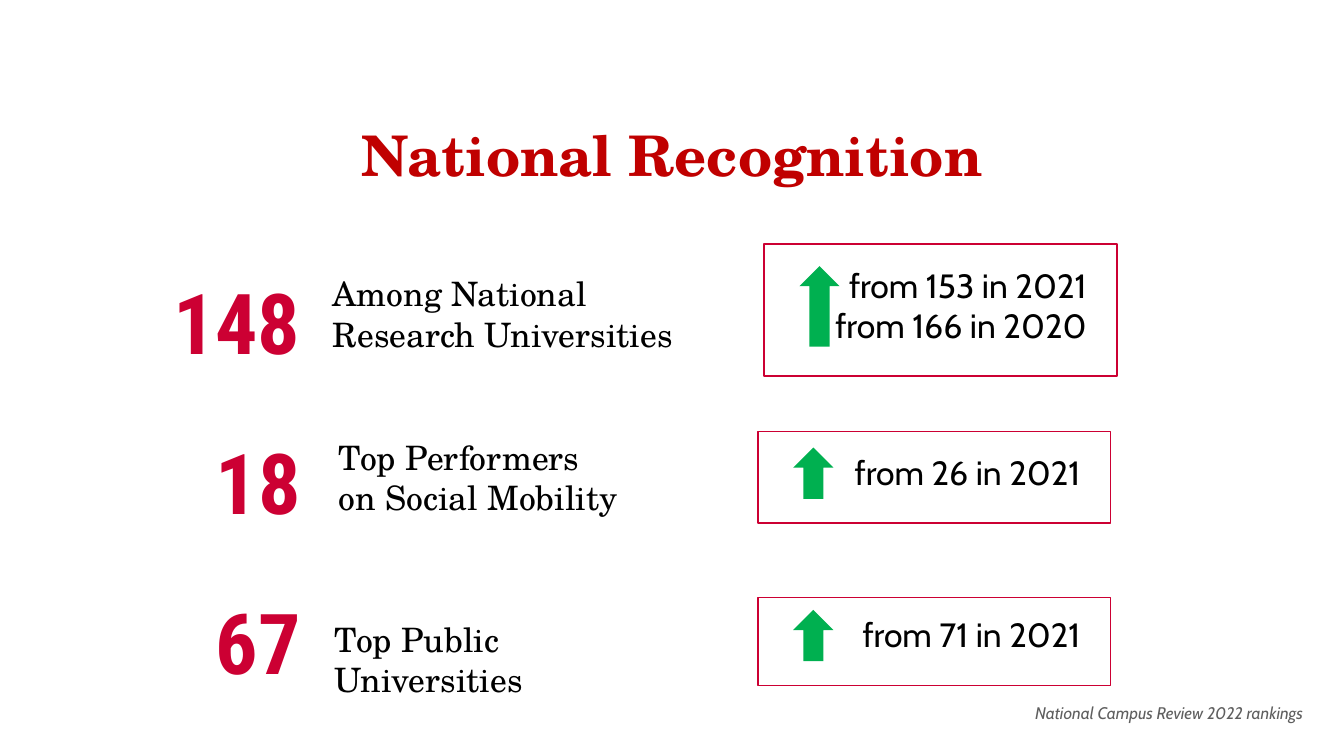
from dataclasses import dataclass

import pptx
import pptx.dml.color
import pptx.enum.shapes
import pptx.enum.text
import pptx.util

Pt = pptx.util.Pt
ALIGN = pptx.enum.text.PP_ALIGN
ANCHOR = pptx.enum.text.MSO_ANCHOR
SHAPE = pptx.enum.shapes.MSO_SHAPE

COLORS = {"title": "C00000", "accent": "CC0033", "arrow": "00B050",
          "text": "000000", "source": "5F5F5F"}
SERIF, SANS, CONDENSED = "TeX Gyre Schola", "Cabin", "Roboto Condensed"

FORMATS = {
    "title": {"name": SERIF, "size": Pt(40), "bold": True},
    "label": {"name": SERIF, "size": Pt(24), "bold": False},
    "rank": {"name": CONDENSED, "size": Pt(60), "bold": True},
    "change": {"name": SANS, "size": Pt(24), "bold": False},
    "source": {"name": SANS, "size": Pt(12), "italic": True},
}
MARGINS = (7.2, 3.6, 7.2, 3.6)
TIGHT = (4.32, 2.16, 4.32, 2.16)
BOX_MARGINS = (21.6, 14.4, 21.6, 21.6)

RANK_RIGHT, RANK_TOP, RANK_PITCH, RANK_HEIGHT = 221.8, 189.4, 114.5, 79.9
BOX_WIDTH, ARROW_INSET, ARROW_WIDTH = 252, 25.2, 28.8


@dataclass
class Area:
    left: float
    top: float
    width: float
    height: float

    def points(self) -> list:
        return [Pt(v) for v in (self.left, self.top, self.width, self.height)]


@dataclass
class Ranking:
    rank: str
    rank_width: float
    label: list
    label_area: Area
    label_margins: tuple
    changes: list
    box: Area
    arrow_top: float
    arrow_height: float
    spacing: float = 1.0


RANKINGS = [
    Ranking("148", 106.6, ["Among National Research Universities"],
            Area(230.4, 191.5, 269.3, 65.5), MARGINS,
            ["from 153 in 2021", "from 166 in 2020"],
            Area(545.8, 174.2, BOX_WIDTH, 94.3), 190.1, 57.6),
    Ranking("18", 88.6, ["Top Performers", "on Social Mobility"],
            Area(234.7, 308.2, 331.9, 65.5), MARGINS,
            ["from 26 in 2021"],
            Area(541.4, 308.2, BOX_WIDTH, 65.5), 319.7, 36.7),
    Ranking("67", 88.6, ["Top Public Universities"],
            Area(234.7, 439.9, 264.2, 36), TIGHT,
            ["from 71 in 2021"],
            Area(541.4, 427, BOX_WIDTH, 62.6), 435.6, 36.7, 0.9),
]


def rgb(key: str) -> pptx.dml.color.RGBColor:
    return pptx.dml.color.RGBColor.from_string(COLORS[key])


def write(sp, lines: list, style: str, color: str, align=ALIGN.LEFT,
          margins: tuple = MARGINS, anchor=ANCHOR.TOP, spacing: float = 1.0) -> None:
    """Fill a shape with one formatted paragraph per line."""
    tf = sp.text_frame
    frame = {"word_wrap": True, "auto_size": pptx.enum.text.MSO_AUTO_SIZE.NONE,
             "vertical_anchor": anchor}
    for side, value in zip(("left", "top", "right", "bottom"), margins):
        frame[f"margin_{side}"] = Pt(value)
    for name, value in frame.items():
        setattr(tf, name, value)
    for i, line in enumerate(lines):
        p = tf.add_paragraph() if i else tf.paragraphs[0]
        p.alignment, p.line_spacing, p.space_before = align, spacing, Pt(0)
        r = p.add_run()
        r.text = line
        for name, value in FORMATS[style].items():
            setattr(r.font, name, value)
        r.font.color.rgb = rgb(color)


def place(sp, area: Area):
    for name, value in zip(("left", "top", "width", "height"), area.points()):
        setattr(sp, name, value)
    return sp


def draw_ranking(slide, item: Ranking, row: int, body) -> None:
    # Rank number
    rank_area = Area(RANK_RIGHT - item.rank_width, RANK_TOP + row * RANK_PITCH,
                     item.rank_width, RANK_HEIGHT)
    sp = slide.shapes.add_textbox(*rank_area.points())
    write(sp, [item.rank], "rank", "accent", ALIGN.RIGHT)

    # Label: the first one sits in the body placeholder
    if row == 0:
        sp = place(body, item.label_area)
    else:
        sp = slide.shapes.add_textbox(*item.label_area.points())
    write(sp, item.label, "label", "text", margins=item.label_margins)

    # Framed change since earlier years
    sp = slide.shapes.add_shape(SHAPE.RECTANGLE, *item.box.points())
    sp.shadow.inherit = False
    sp.fill.background()
    sp.line.color.rgb = rgb("accent")
    sp.line.width = Pt(1)
    write(sp, item.changes, "change", "text", ALIGN.RIGHT, BOX_MARGINS,
          ANCHOR.MIDDLE, item.spacing)

    # Upward arrow
    arrow = Area(item.box.left + ARROW_INSET, item.arrow_top, ARROW_WIDTH, item.arrow_height)
    sp = slide.shapes.add_shape(SHAPE.UP_ARROW, *arrow.points())
    sp.shadow.inherit = False
    sp.fill.solid()
    sp.fill.fore_color.rgb = rgb("arrow")
    sp.line.fill.background()


def main() -> None:
    prs = pptx.Presentation()
    prs.slide_width, prs.slide_height = Pt(960), Pt(540)
    slide = prs.slides.add_slide(prs.slide_layouts[1])

    # Title
    title = place(slide.shapes.title, Area(156.2, 72, 648, 102.2))
    write(title, ["National Recognition"], "title", "title", ALIGN.CENTER,
          (7.2, 3.6, 7.2, 30), ANCHOR.MIDDLE)

    # Rankings, the body placeholder without bullet
    body = slide.placeholders[1]
    pPr = body.text_frame.paragraphs[0]._p.get_or_add_pPr()
    pPr.set("marL", "0")
    pPr.set("indent", "0")
    pPr.append(pptx.oxml.parse_xml(
        '<a:buNone xmlns:a="http://schemas.openxmlformats.org/drawingml/2006/main"/>'))
    for row, item in enumerate(RANKINGS):
        draw_ranking(slide, item, row, body)

    # Source line
    sp = slide.shapes.add_textbox(*Area(654.5, 499.7, 280.8, 33.1).points())
    write(sp, ["National Campus Review 2022 rankings"], "source", "source",
          ALIGN.RIGHT, TIGHT)

    prs.save("out.pptx")


if __name__ == "__main__":
    main()
